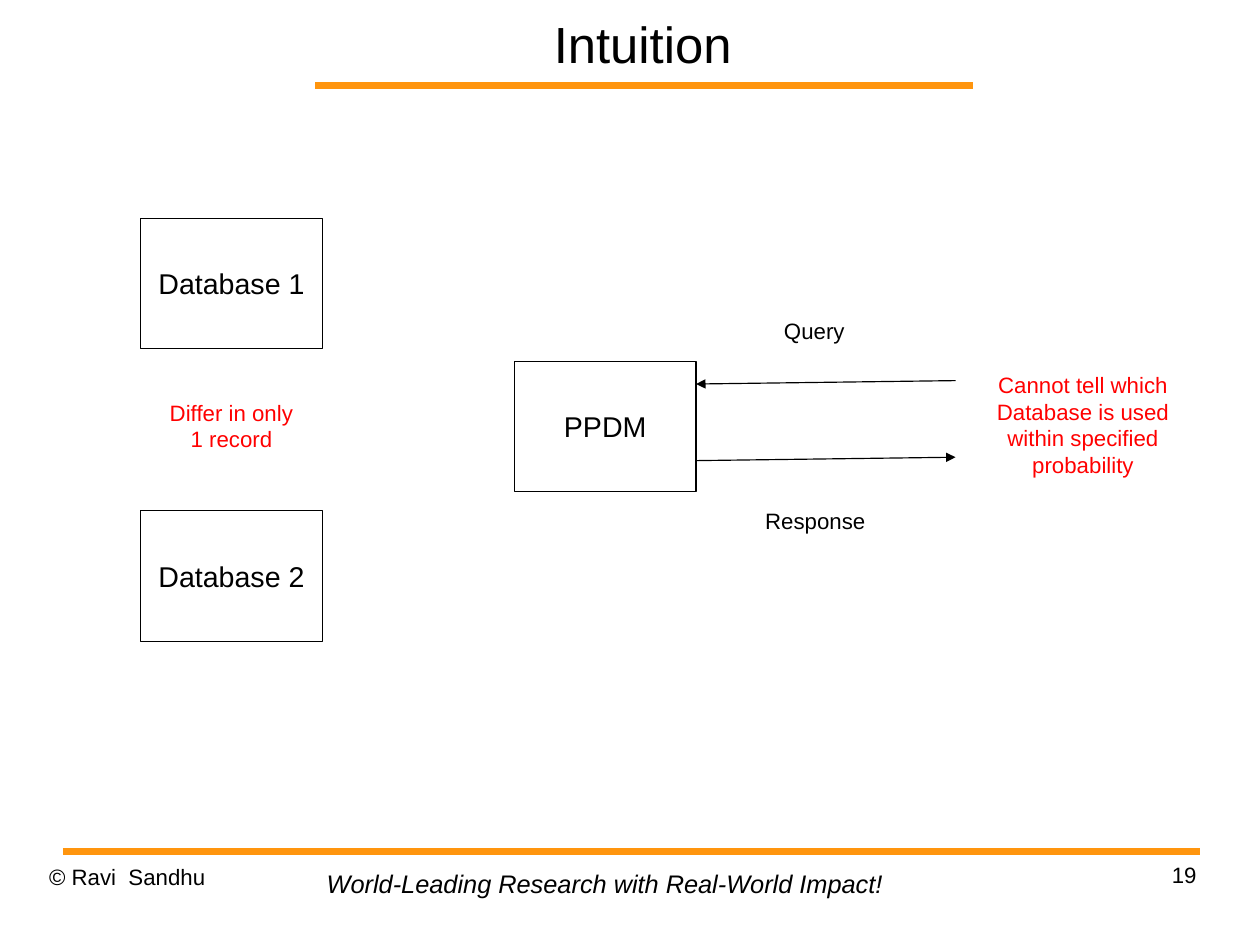
from lxml import etree
from pptx import Presentation
from pptx.dml.color import RGBColor
from pptx.enum import shapes, text
from pptx.oxml import ns
from pptx.util import Inches, Pt

BLACK = RGBColor(0x00, 0x00, 0x00)
WHITE = RGBColor(0xFF, 0xFF, 0xFF)
RED = RGBColor(0xFF, 0x00, 0x00)
ORANGE = RGBColor(0xFF, 0x95, 0x0E)
LEFT, CENTER, RIGHT = (text.PP_ALIGN.LEFT, text.PP_ALIGN.CENTER,
                       text.PP_ALIGN.RIGHT)
TOP, MIDDLE = text.MSO_ANCHOR.TOP, text.MSO_ANCHOR.MIDDLE
CM_PER_INCH = 2.54
BOX_WIDTH, BOX_HEIGHT = 1.59, 1.14


def write(frame, words, size=14, color=BLACK, align=CENTER, anchor=TOP,
          italic=False, wrap=False, inset=True, spacing=None):
    """Fill a text frame; each line of words becomes a paragraph."""
    frame.text = words
    frame.auto_size = text.MSO_AUTO_SIZE.NONE
    frame.word_wrap = wrap
    frame.vertical_anchor = anchor
    if not inset:
        frame.margin_left = frame.margin_right = 0
        frame.margin_top = frame.margin_bottom = 0
    for paragraph in frame.paragraphs:
        paragraph.alignment = align
        if spacing:
            paragraph.line_spacing = spacing
        font = paragraph.font
        font.name, font.size, font.italic = "Arial", Pt(size), italic
        font.color.rgb = color


def add_label(slide, words, left, top, width, height, **style):
    label = slide.shapes.add_textbox(
        Inches(left), Inches(top), Inches(width), Inches(height))
    write(label.text_frame, words, **style)


def add_title(slide, words):
    title = slide.shapes.title
    title.left, title.top = Inches(2.41), Inches(0)
    title.width, title.height = Inches(6.43), Inches(0.75)
    write(title.text_frame, words, size=32, anchor=MIDDLE, wrap=True,
          inset=False)


def add_box(slide, words, left, top):
    box = slide.shapes.add_shape(
        shapes.MSO_SHAPE.RECTANGLE, Inches(left), Inches(top),
        Inches(BOX_WIDTH), Inches(BOX_HEIGHT))
    box.shadow.inherit = False
    box.fill.solid()
    box.fill.fore_color.rgb = WHITE
    box.line.color.rgb = BLACK
    box.line.width = Pt(0.75)
    write(box.text_frame, words, size=18, anchor=MIDDLE)


def add_line(slide, start, end, color=BLACK, width=0.75, arrow=False):
    line = slide.shapes.add_connector(
        shapes.MSO_CONNECTOR.STRAIGHT,
        *(Inches(value) for value in (*start, *end)))
    line.line.color.rgb = color
    line.line.width = Pt(width)
    if arrow:
        outline = line.line._get_or_add_ln()
        etree.SubElement(outline, ns.qn("a:tailEnd"), type="triangle")
    etree.SubElement(line._element.spPr, ns.qn("a:effectLst"))


def add_frame(slide):
    """Add the orange rules and the footer."""
    for left, right, y in ((2.76, 8.51, 0.75), (0.55, 10.5, 7.45)):
        add_line(slide, (left, y), (right, y), color=ORANGE, width=4.31)
    add_label(slide, "© Ravi  Sandhu", 0.43, 7.55, 2.57, 0.57, align=LEFT,
              wrap=True, inset=False, spacing=1.01)
    add_label(slide, "19", 7.9, 7.53, 2.57, 0.57, align=RIGHT,
              wrap=True, inset=False, spacing=1.01)
    add_label(slide, "World-Leading Research with Real-World Impact!",
              2.76, 7.55, 5.08, 0.37, size=16, align=LEFT, italic=True)


def main():
    deck = Presentation()
    deck.slide_width = Inches(28 / CM_PER_INCH)
    deck.slide_height = Inches(21 / CM_PER_INCH)
    slide = deck.slides.add_slide(deck.slide_layouts[5])

    add_frame(slide)
    add_title(slide, "Intuition")

    add_box(slide, "Database 1", 1.23, 1.91)
    add_box(slide, "Database 2", 1.23, 4.47)
    add_label(slide, "Differ in only\n1 record", 1.38, 3.44, 1.29, 0.57,
              color=RED)

    ppdm_left, user_left = 4.5, 8.36
    ppdm_right = ppdm_left + BOX_WIDTH
    add_box(slide, "PPDM", ppdm_left, 3.16)
    add_line(slide, (user_left, 3.33), (ppdm_right, 3.36), arrow=True)
    add_line(slide, (ppdm_right, 4.03), (user_left, 4), arrow=True)
    add_label(slide, "Query", 6.76, 2.73, 0.73, 0.34)
    add_label(slide, "Response", 6.59, 4.39, 1.08, 0.34, align=RIGHT)
    add_label(slide, "Cannot tell which\nDatabase is used\n"
              "within specified\nprobability", 8.62, 3.2, 1.71, 1.04,
              color=RED)

    deck.save("out.pptx")


if __name__ == "__main__":
    main()
